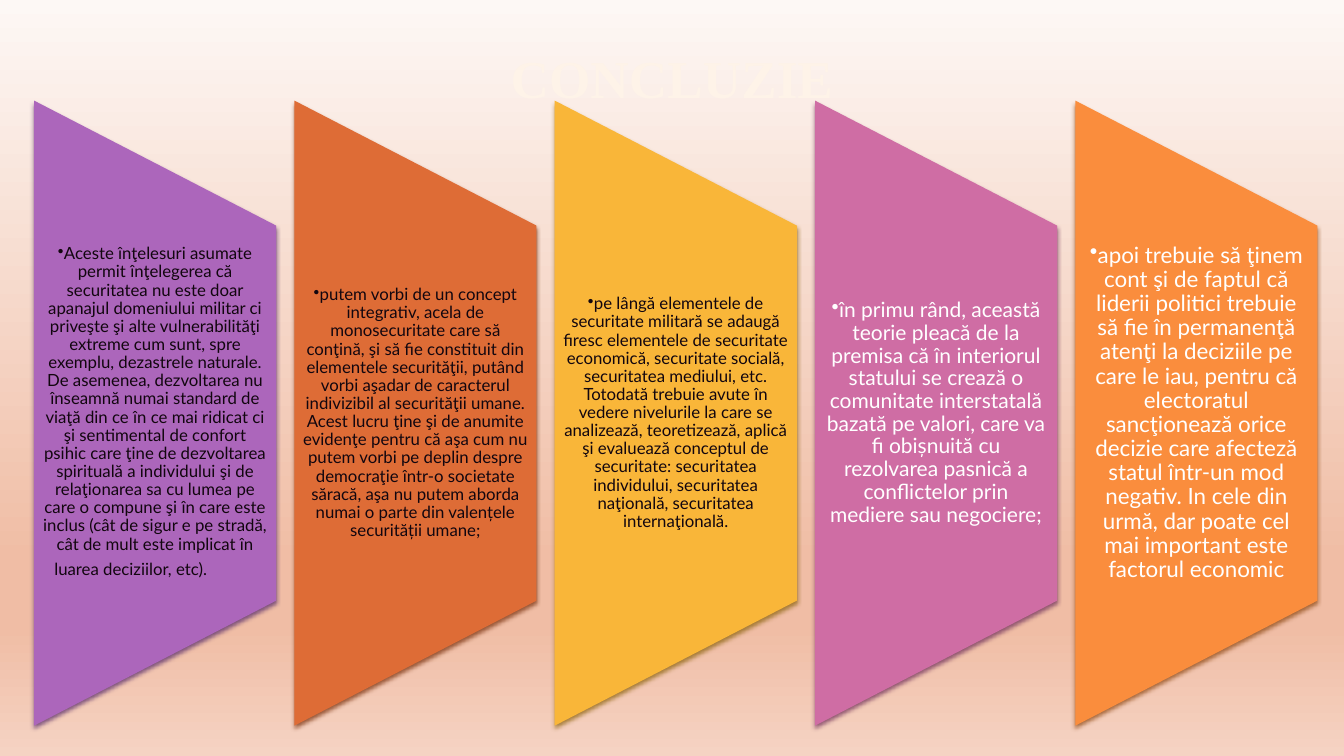
"""Build the CONCLUZIE slide: five slanted panels of text on a warm gradient."""
from dataclasses import dataclass

from lxml.etree import SubElement
from pptx import Presentation
from pptx.dml.color import RGBColor
from pptx.enum.shapes import MSO_SHAPE as SHAPE
from pptx.enum.text import MSO_ANCHOR as ANCHOR, PP_ALIGN as ALIGN
from pptx.oxml.ns import qn
from pptx.util import Cm, Pt


@dataclass(frozen=True)
class Theme:
    background: tuple = ((0, "FDF8F5"), (74, "F0BDA5"), (83, "F0BDA5"), (100, "F5D3C3"))
    title: str = "FEF3E8"
    dark: str = "12060F"
    light: str = "FFFFFF"
    title_font: str = "Times New Roman"
    body_font: str = "Lato"
    title_size: int = 38
    tab_size: int = 18
    small: int = 12
    medium: int = 15
    large: int = 16
    shade: float = 0.617


T = Theme()
PANELS = [
    ("AC66BB", T.dark, T.small, 0.2,
     "Aceste înţelesuri asumate permit înţelegerea că securitatea nu este doar apanajul "
     "domeniului militar ci priveşte şi alte vulnerabilităţi extreme cum sunt, spre exemplu, "
     "dezastrele naturale. De asemenea, dezvoltarea nu înseamnă numai standard de viaţă din ce "
     "în ce mai ridicat ci şi sentimental de confort psihic care ţine de dezvoltarea spirituală "
     "a individului şi de relaţionarea sa cu lumea pe care o compune şi în care este inclus "
     "(cât de sigur e pe stradă, cât de mult este implicat în luarea deciziilor, etc). "),
    ("DE6C36", T.dark, T.small, 0.2,
     "putem vorbi de un concept integrativ, acela de monosecuritate care să conţină, şi să fie "
     "constituit din elementele securităţii, putând vorbi aşadar de caracterul indivizibil al "
     "securităţii umane. Acest lucru ţine şi de anumite evidenţe pentru că aşa cum nu putem "
     "vorbi pe deplin despre democraţie într-o societate săracă, aşa nu putem aborda numai o "
     "parte din valențele securității umane;"),
    ("F9B639", T.dark, T.small, 0.2,
     "pe lângă elementele de securitate militară se adaugă firesc elementele de securitate "
     "economică, securitate socială, securitatea mediului, etc. Totodată trebuie avute în vedere "
     "nivelurile la care se analizează, teoretizează, aplică şi evaluează conceptul de "
     "securitate: securitatea individului, securitatea naţională, securitatea internaţională."),
    ("CF6DA4", T.light, T.medium, 0.26,
     "în primu rând, această teorie pleacă de la premisa că în interiorul statului se crează o "
     "comunitate interstatală bazată pe valori, care va fi obișnuită cu rezolvarea pasnică a "
     "conflictelor prin mediere sau negociere;"),
    ("FA8D3D", T.light, T.large, 0.28,
     "apoi trebuie să ţinem cont şi de faptul că liderii politici trebuie să fie în permanenţă "
     "atenţi la deciziile pe care le iau, pentru că electoratul sancţionează orice decizie care "
     "afecteză statul într-un mod negativ. In cele din urmă, dar poate cel mai important este "
     "factorul economic"),
]


def add_text(s, text, *, box, size, color, font=T.body_font, bold=False, inset=0.13,
             anchor=ANCHOR.MIDDLE, spacing=None, bullet=None):
    tf = s.shapes.add_textbox(*map(Cm, box)).text_frame
    tf.word_wrap = True
    tf.vertical_anchor = anchor
    tf.margin_left = tf.margin_right = Cm(inset)
    tf.margin_top = tf.margin_bottom = 0
    p = tf.paragraphs[0]
    p.alignment = ALIGN.CENTER
    if spacing:
        p.line_spacing = spacing
    if bullet:
        pPr = p._p.get_or_add_pPr()
        pPr.set("marL", "0")
        pPr.set("indent", "0")
        SubElement(pPr, qn("a:buChar")).set("char", bullet)
    r = p.add_run()
    r.text = text
    r.font.name, r.font.size, r.font.bold = font, Pt(size), bold
    r.font.color.rgb = RGBColor.from_string(color)
    return p


prs = Presentation()
prs.slide_width, prs.slide_height = Cm(33.87), Cm(19.05)
s = prs.slides.add_slide(prs.slide_layouts[6])

fill = s.background.fill
fill.gradient()
fill.gradient_angle = 270
stops = s._element.find(".//" + qn("a:gsLst"))
for stop in list(stops):
    stops.remove(stop)
for position, color in T.background:
    stop = SubElement(stops, qn("a:gs"), pos=str(position * 1000))
    SubElement(stop, qn("a:srgbClr"), val=color)

add_text(s, "CONCLUZIE", box=(3.39, 0.76, 27.09, 1.98), size=T.title_size, color=T.title,
         font=T.title_font, bold=True, anchor=ANCHOR.BOTTOM)

LEFT, PITCH, WIDTH, HEIGHT, MIDDLE = 0.86, 6.56, 6.1, 15.75, 10.41
TEXT_HEIGHT = HEIGHT * 0.6

for i, (color, ink, size, inset, text) in enumerate(PANELS):
    x = LEFT + i * PITCH
    sp = s.shapes.add_shape(SHAPE.FLOWCHART_MANUAL_OPERATION,
                            Cm(x + (WIDTH - HEIGHT) / 2), Cm(MIDDLE - WIDTH / 2),
                            Cm(HEIGHT), Cm(WIDTH))
    sp.rotation = 270
    rgb = RGBColor.from_string(color)
    sp.fill.solid()
    sp.fill.fore_color.rgb = rgb
    sp.line.fill.background()
    sp.shadow.inherit = False
    effects = sp._element.spPr.find(qn("a:effectLst"))
    shadow = SubElement(effects, qn("a:outerShdw"), blurRad=str(Pt(3.1)), dist=str(Pt(2)),
                        dir="5400000", rotWithShape="0")
    shade = RGBColor(*(round(c * T.shade) for c in rgb))
    tint = SubElement(shadow, qn("a:srgbClr"), val=str(shade))
    SubElement(tint, qn("a:alpha"), val="83000")

    p = add_text(s, text, box=(x, MIDDLE - TEXT_HEIGHT / 2, WIDTH, TEXT_HEIGHT), size=size,
                 color=ink, inset=inset, spacing=0.9, bullet="•")
    if i == 0:
        r = p.add_run()
        r.text = "\t"
        r.font.name, r.font.size = T.body_font, Pt(T.tab_size)

prs.save("out.pptx")
